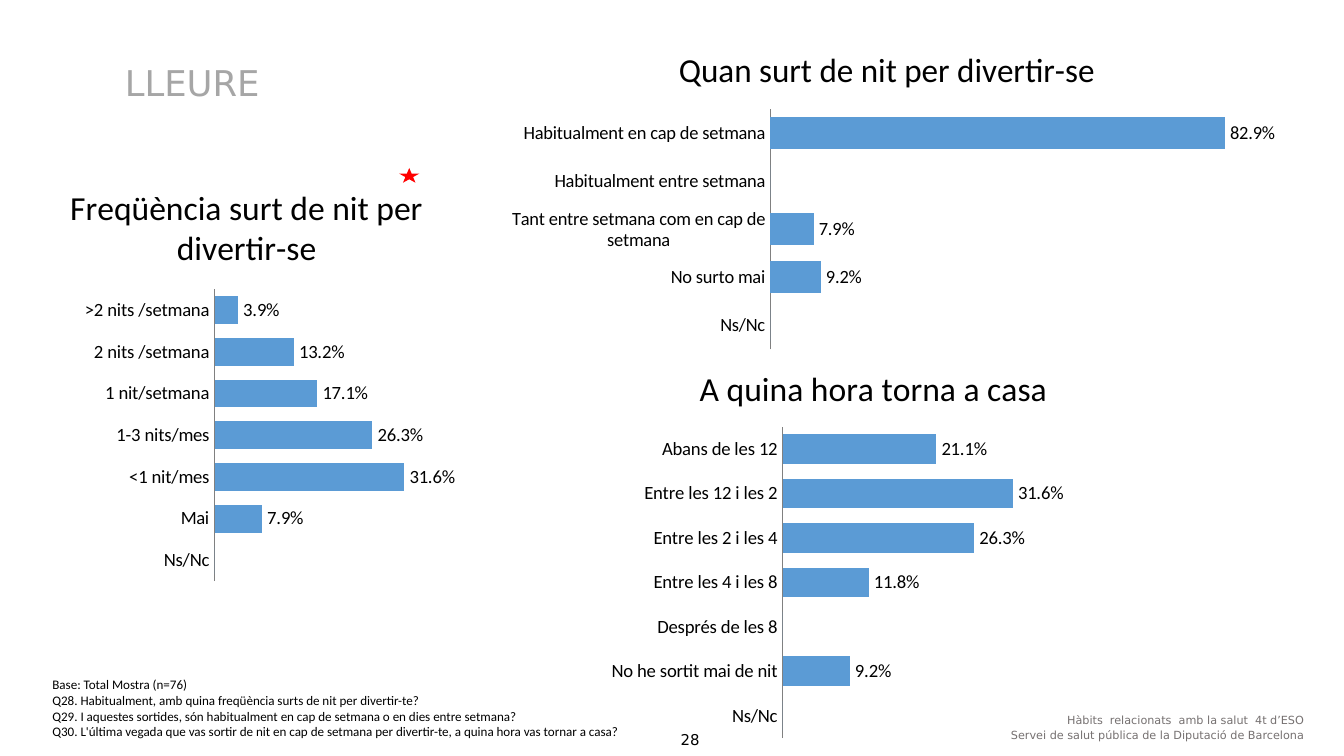
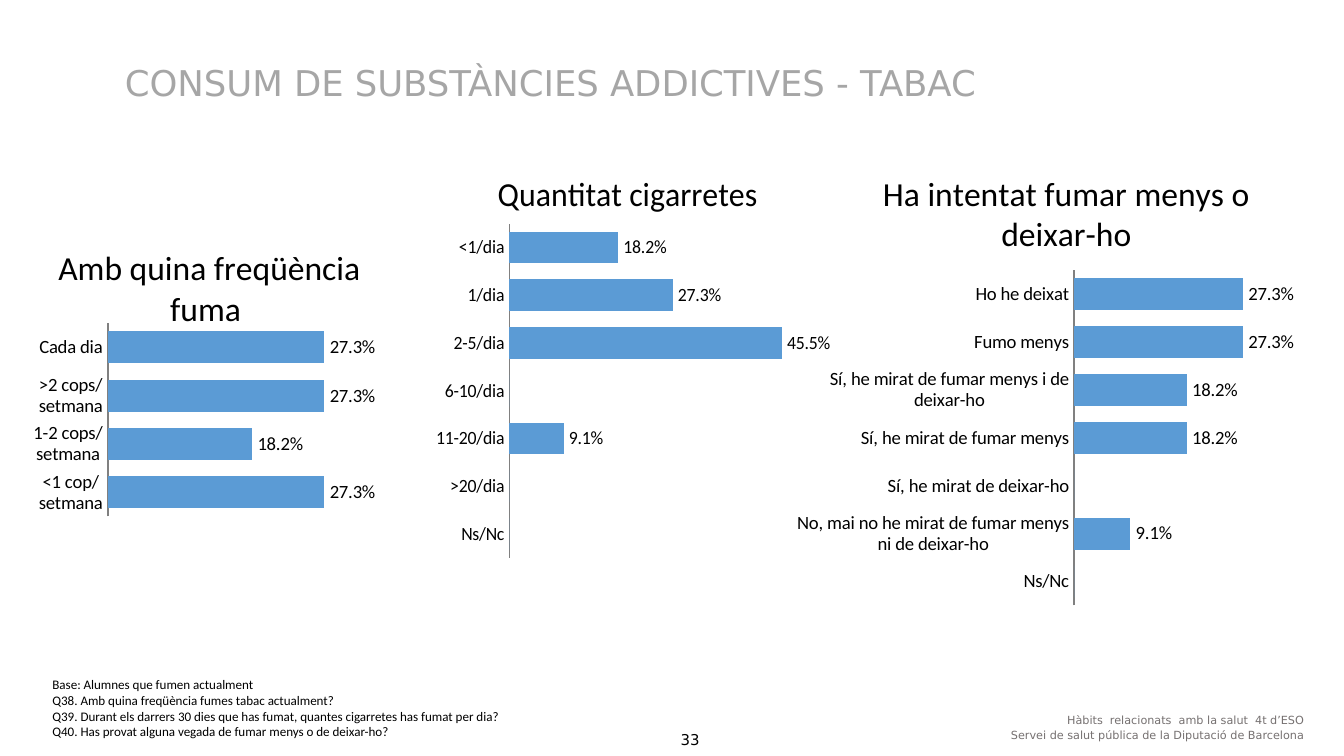
from lxml import etree
from pptx import Presentation
from pptx import util as u
from pptx.chart import data
from pptx.dml.color import RGBColor
from pptx.enum import chart as ch, shapes, text
from pptx.oxml.ns import qn

W = 10
H = W * 9 / 16
BAR, AXIS, INK, HEADING, MUTED, STAR = "5B9BD5", "808080", "000000", "A6A6A6", "767171", "FF0000"
SANS, BODY = "DejaVu Sans", "Calibri"
FOOTER = ["Hàbits  relacionats  amb la salut  4t d’ESO",
          "Servei de salut pública de la Diputació de Barcelona"]

TOPICS = [
    {
        "heading": "LLEURE",
        "number": "28",
        "star": (2.97, 1.25, 0.15, 0.11),
        "notes": [
            "Base: Total Mostra (n=76)",
            "Q28. Habitualment, amb quina freqüència surts de nit per divertir-te?",
            "Q29. I aquestes sortides, són habitualment en cap de setmana o en dies entre setmana?",
            "Q30. L'última vegada que vas sortir de nit en cap de setmana per divertir-te, a quina hora vas tornar a casa?",
        ],
        "questions": [
            {"title": "Freqüència surt de nit per divertir-se", "title_at": (2, 0.8),
             "at": (0.39, 1.3, 4.37, 3.03), "plot": (27.6, 28.2, 35.8, 71.8), "top": 0.35,
             "answers": [(">2 nits /setmana", 0.039), ("2 nits /setmana", 0.132),
                         ("1 nit/setmana", 0.171), ("1-3 nits/mes", 0.263),
                         ("<1 nit/mes", 0.316), ("Mai", 0.079), ("Ns/Nc", 0)]},
            {"title": "Quan surt de nit per divertir-se", "title_at": (21.8, 3.8),
             "at": (3.78, 0.2, 5.71, 2.56), "plot": (34.7, 23.9, 65.3, 69.9), "top": 0.9,
             "answers": [("Habitualment en cap de setmana", 0.829),
                         ("Habitualment entre setmana", 0),
                         ("Tant entre setmana com en cap de setmana", 0.079),
                         ("No surto mai", 0.092), ("Ns/Nc", 0)]},
            {"title": "A quina hora torna a casa", "title_at": (19.2, 3.8),
             "at": (4.33, 2.56, 4.33, 2.99), "plot": (34.5, 20.6, 43.8, 77.5), "top": 0.35,
             "answers": [("Abans de les 12", 0.211), ("Entre les 12 i les 2", 0.316),
                         ("Entre les 2 i les 4", 0.263), ("Entre les 4 i les 8", 0.118),
                         ("Després de les 8", 0), ("No he sortit mai de nit", 0.092),
                         ("Ns/Nc", 0)]},
        ],
    },
    {
        "heading": "CONSUM DE SUBSTÀNCIES ADDICTIVES - TABAC",
        "number": "33",
        "star": None,
        "notes": [
            "Base: Alumnes que fumen actualment",
            "Q38. Amb quina freqüència fumes tabac actualment?",
            "Q39. Durant els darrers 30 dies que has fumat, quantes cigarretes has fumat per dia?",
            "Q40. Has provat alguna vegada de fumar menys o de deixar-ho?",
        ],
        "questions": [
            {"title": "Amb quina freqüència fuma ", "title_at": (12, 0.2),
             "at": (0.02, 1.77, 3.07, 2.11), "plot": (25.5, 30.1, 57.7, 68.2), "top": 0.3,
             "answers": [("Cada dia", 0.273), (">2 cops/ setmana", 0.273),
                         ("1-2 cops/ setmana", 0.182), ("<1 cop/ setmana", 0.273)]},
            {"title": "Quantitat cigarretes", "title_at": (20, 1.3),
             "at": (3.07, 1.18, 3.11, 3.03), "plot": (24.4, 16, 75.6, 82.1), "top": 0.5,
             "answers": [("<1/dia", 0.182), ("1/dia", 0.273), ("2-5/dia", 0.455),
                         ("6-10/dia", 0), ("11-20/dia", 0.091), (">20/dia", 0), ("Ns/Nc", 0)]},
            {"title": "Ha intentat fumar menys o deixar-ho", "title_at": (15.5, 3.5),
             "at": (5.89, 1.1, 4.09, 3.43), "plot": (51.4, 26.6, 33.8, 72.7), "top": 0.3,
             "answers": [("Ho he deixat", 0.273), ("Fumo menys", 0.273),
                         ("Sí, he mirat de fumar menys i de deixar-ho", 0.182),
                         ("Sí, he mirat de fumar menys", 0.182),
                         ("Sí, he mirat de deixar-ho", 0),
                         ("No, mai no he mirat de fumar menys ni de deixar-ho", 0.091),
                         ("Ns/Nc", 0)]},
        ],
    },
]


def colour(code):
    return RGBColor.from_string(code)


def inches(box):
    return [u.Inches(length) for length in box]


def apply(target, **values):
    for name, value in values.items():
        setattr(target, name, value)


def set_font(font, size, face, code):
    apply(font, size=u.Pt(size), name=face, bold=False)
    font.color.rgb = colour(code)


def add_text(slide, box, words, size, code, align, **paragraph_format):
    frame = slide.shapes.add_textbox(*inches(box)).text_frame
    apply(frame, word_wrap=True, vertical_anchor=text.MSO_ANCHOR.BOTTOM,
          margin_left=0, margin_top=0, margin_right=0, margin_bottom=0)
    line = frame.paragraphs[0]
    apply(line, alignment=align, **paragraph_format)
    run = line.add_run()
    run.text = words
    set_font(run.font, size, SANS, code)


def place(parent, index, percents, inner=False):
    layout = parent.find(qn("c:layout"))
    if layout is None:
        layout = etree.Element(qn("c:layout"))
        parent.insert(index, layout)
    manual = etree.SubElement(layout, qn("c:manualLayout"))
    entries = [("layoutTarget", "inner")] if inner else []
    entries += [("xMode", "edge"), ("yMode", "edge")]
    entries += [(side, round(percent / 100, 3)) for side, percent in zip("xywh", percents)]
    for tag, value in entries:
        etree.SubElement(manual, qn("c:" + tag)).set("val", str(value))


def hide_label(labels, index):
    label = etree.Element(qn("c:dLbl"))
    for tag, value in (("idx", index), ("delete", 1)):
        etree.SubElement(label, qn("c:" + tag)).set("val", str(value))
    labels.insert(0, label)


def add_question(slide, question):
    names, shares = zip(*question["answers"])
    content = data.CategoryChartData(number_format="0.0%")
    content.categories = names
    content.add_series("Series 1", shares)
    chart = slide.shapes.add_chart(
        ch.XL_CHART_TYPE.BAR_CLUSTERED, *inches(question["at"]), content).chart
    set_font(chart.font, 10, BODY, INK)
    apply(chart, has_legend=False, has_title=True)

    heading = chart.chart_title
    heading.include_in_layout = False
    heading.text_frame.text = question["title"]
    set_font(heading.text_frame.paragraphs[0].runs[0].font, 18, BODY, INK)
    place(heading._element, 1, question["title_at"])
    place(chart._chartSpace.chart.plotArea, 0, question["plot"], inner=True)

    apply(chart.category_axis, reverse_order=True, has_major_gridlines=False,
          major_tick_mark=ch.XL_TICK_MARK.NONE, minor_tick_mark=ch.XL_TICK_MARK.NONE)
    axis_line = chart.category_axis.format.line
    axis_line.color.rgb = colour(AXIS)
    axis_line.width = u.Pt(0.75)
    apply(chart.value_axis, visible=False, has_major_gridlines=False,
          minimum_scale=0, maximum_scale=question["top"])
    apply(chart.value_axis.tick_labels, number_format="0.0%", number_format_is_linked=False)

    bars = chart.plots[0]
    apply(bars, gap_width=50, vary_by_categories=False)
    series = bars.series[0]
    series.format.fill.solid()
    series.format.fill.fore_color.rgb = colour(BAR)
    labels = series.data_labels
    apply(labels, show_value=True, number_format="0.0%", number_format_is_linked=False,
          position=ch.XL_LABEL_POSITION.OUTSIDE_END)
    for index in reversed(range(len(shares))):
        if not shares[index]:
            hide_label(labels._element, index)


def clear_borders(cell):
    properties = cell._tc.get_or_add_tcPr()
    for index, side in enumerate("LRTB"):
        border = etree.Element(qn("a:ln" + side))
        etree.SubElement(border, qn("a:noFill"))
        properties.insert(index, border)


def add_notes(slide, notes):
    table = slide.shapes.add_table(len(notes), 1, *inches((0.39, 5.04, 5.91, 0.47))).table
    apply(table, first_row=False, horz_banding=False)
    for row, note in zip(table.rows, notes):
        cell = row.cells[0]
        cell.fill.background()
        clear_borders(cell)
        apply(cell, text=note, vertical_anchor=text.MSO_ANCHOR.BOTTOM,
              margin_left=0, margin_top=0, margin_right=0, margin_bottom=0)
        set_font(cell.text_frame.paragraphs[0].runs[0].font, 7, BODY, INK)


def add_star(slide, box):
    star = slide.shapes.add_shape(shapes.MSO_SHAPE.STAR_5_POINT, *inches(box))
    star.shadow.inherit = False
    star.fill.solid()
    star.fill.fore_color.rgb = colour(STAR)
    star.line.fill.background()


def add_topic(deck, topic):
    slide = deck.slides.add_slide(deck.slide_layouts[6])
    add_text(slide, (0.43, 5.44, 9.41, 0.13), topic["number"], 8, INK, text.PP_ALIGN.CENTER)
    for row, words in enumerate(FOOTER):
        add_text(slide, (6.65, 5.31 + row * 0.11, 3.05, 0.1), words, 6, MUTED,
                 text.PP_ALIGN.RIGHT)
    add_text(slide, (0.93, 0.29, 8.44, 0.48), topic["heading"], 19, HEADING,
             text.PP_ALIGN.LEFT, space_before=u.Pt(3), space_after=u.Pt(3))
    for question in topic["questions"]:
        add_question(slide, question)
    add_notes(slide, topic["notes"])
    if topic["star"]:
        add_star(slide, topic["star"])


def main():
    deck = Presentation()
    apply(deck, slide_width=u.Inches(W), slide_height=u.Inches(H))
    for topic in TOPICS:
        add_topic(deck, topic)
    deck.save("out.pptx")


if __name__ == "__main__":
    main()
